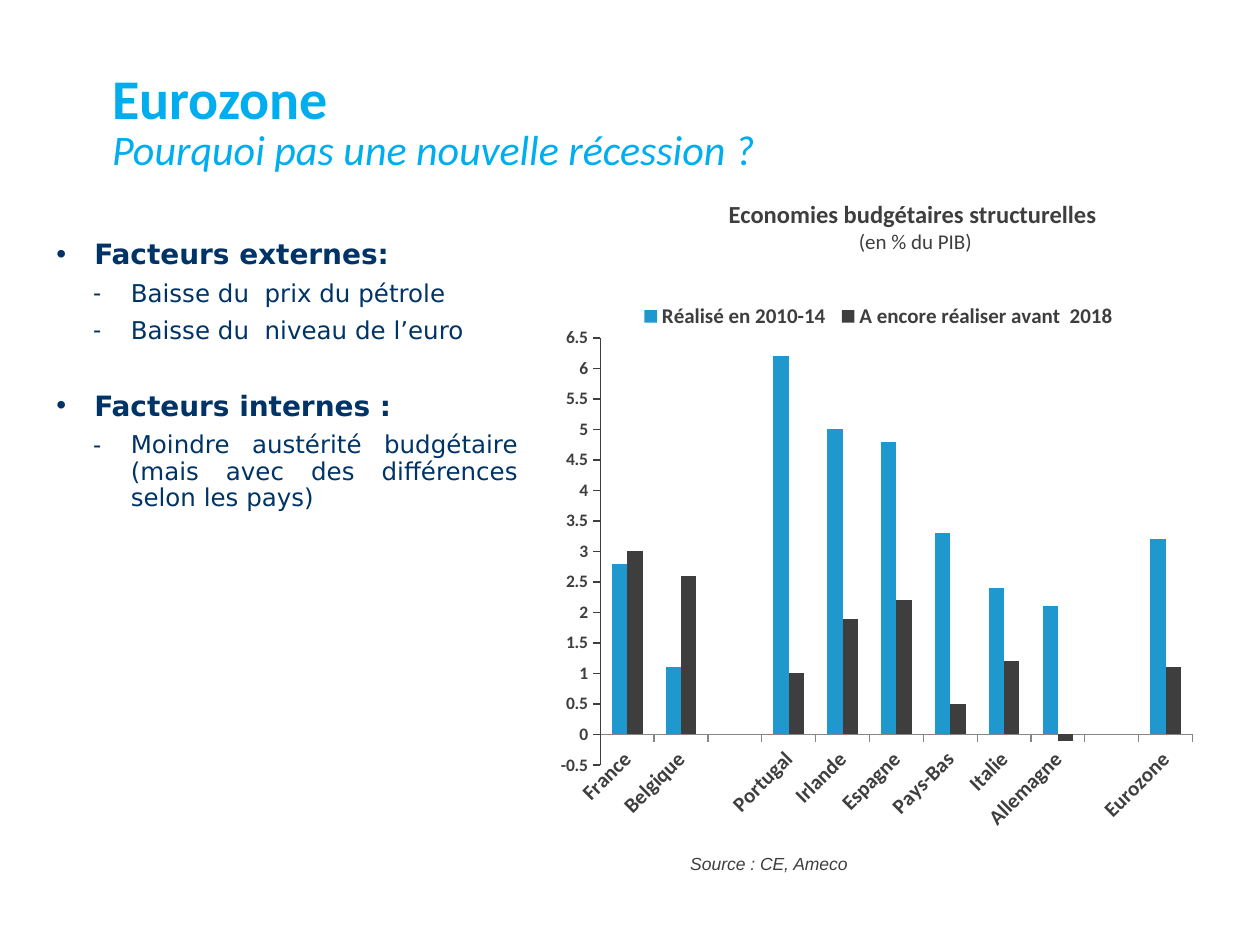
from lxml.etree import SubElement
from pptx import Presentation
from pptx.chart.data import CategoryChartData
from pptx.dml.color import RGBColor
from pptx.enum.chart import XL_CHART_TYPE, XL_LEGEND_POSITION, XL_TICK_MARK
from pptx.enum.text import MSO_ANCHOR, PP_ALIGN
from pptx.oxml.ns import qn
from pptx.util import Inches, Pt

COLORS = {"title": "00AEEF", "body": "003366", "dark": "3E3E3E",
          "done": "1F99CD", "axis": "868686"}
COUNTRIES = ["France", "Belgique", "", "Portugal", "Irlande", "Espagne",
             "Pays-Bas", "Italie", "Allemagne", "", "Eurozone"]
SAVINGS = {
    "Réalisé en 2010-14":
        ("done", [2.8, 1.1, None, 6.2, 5, 4.8, 3.3, 2.4, 2.1, None, 3.2]),
    "A encore réaliser avant  2018 ":
        ("dark", [3, 2.6, None, 1, 1.9, 2.2, 0.5, 1.2, -0.1, None, 1.1]),
}
FACTORS = [
    ("Facteurs externes: ",
     ["Baisse du  prix du pétrole", "Baisse du  niveau de l’euro "]),
    ("Facteurs internes :",
     ["Moindre austérité budgétaire (mais avec des différences selon les pays) "]),
]


def rgb(name):
    return RGBColor.from_string(COLORS[name])


def set_layout(element, position, **fractions):
    """Place a chart part by fractions of the chart's size."""
    for old in element.findall(qn("c:layout")):
        element.remove(old)
    layout = element.makeelement(qn("c:layout"))
    element.insert(position, layout)
    manual = SubElement(layout, qn("c:manualLayout"))
    if element.tag == qn("c:plotArea"):
        SubElement(manual, qn("c:layoutTarget")).set("val", "inner")
    for mode in ("xMode", "yMode"):
        SubElement(manual, qn(f"c:{mode}")).set("val", "edge")
    for key, value in fractions.items():
        SubElement(manual, qn(f"c:{key}")).set("val", str(value))


class SlideBuilder:
    def __init__(self, slide):
        self.slide = slide

    def style_font(self, font, color, **values):
        for key, value in values.items():
            setattr(font, key, value)
        font.color.rgb = rgb(color)

    def add_run(self, paragraph, text, color, **values):
        run = paragraph.add_run()
        run.text = text
        self.style_font(run.font, color, **values)

    def title(self, heading, subtitle, box):
        title = self.slide.shapes.title
        title.left, title.top, title.width, title.height = map(Inches, box)
        frame = title.text_frame
        frame.word_wrap = True
        frame.vertical_anchor = MSO_ANCHOR.TOP
        frame.margin_top = Inches(0.08)
        paragraph = frame.paragraphs[0]
        paragraph.alignment = PP_ALIGN.LEFT
        paragraph.line_spacing = 0.85
        self.add_run(paragraph, heading, "title", name="Calibri", size=Pt(32), bold=True)
        paragraph.add_line_break()
        self.add_run(paragraph, subtitle, "title", name="Calibri", size=Pt(24),
                     bold=False, italic=True)

    def text_frame(self, box):
        frame = self.slide.shapes.add_textbox(*map(Inches, box)).text_frame
        frame.word_wrap = True
        return frame

    def text(self, lines, box, alignment=PP_ALIGN.LEFT):
        frame = self.text_frame(box)
        for index, (line, values) in enumerate(lines):
            paragraph = frame.add_paragraph() if index else frame.paragraphs[0]
            paragraph.alignment = alignment
            self.add_run(paragraph, line, "dark", **values)

    def bullet(self, paragraph, text, level, space_before):
        properties = paragraph._p.get_or_add_pPr()
        properties.set("marL", str(Inches((0.3, 0.59)[level])))
        properties.set("indent", str(Inches(-0.3)))
        color = SubElement(properties, qn("a:buClr"))
        SubElement(color, qn("a:srgbClr")).set("val", COLORS["body"])
        SubElement(properties, qn("a:buFont")).set("typeface", "Arial")
        SubElement(properties, qn("a:buChar")).set("char", "•-"[level])
        values = {"level": level, "alignment": PP_ALIGN.JUSTIFY, "line_spacing": 0.9,
                  "space_before": Pt(space_before), "space_after": Pt(3)}
        for key, value in values.items():
            setattr(paragraph, key, value)
        self.add_run(paragraph, text, "body", name="DejaVu Sans",
                     size=Pt((16, 14)[level]), bold=level == 0)

    def bullets(self, groups, box):
        frame = self.text_frame(box)
        for index, (heading, details) in enumerate(groups):
            paragraph = frame.add_paragraph() if index else frame.paragraphs[0]
            self.bullet(paragraph, heading, 0, 24 if index else 0)
            for detail in details:
                self.bullet(frame.add_paragraph(), detail, 1, 3)

    def column_chart(self, categories, series, box):
        data = CategoryChartData()
        data.categories = categories
        for name, (_, values) in series.items():
            data.add_series(name, values)
        chart = self.slide.shapes.add_chart(
            XL_CHART_TYPE.COLUMN_CLUSTERED, *map(Inches, box), data).chart
        chart.has_title = False
        self.style_font(chart.font, "dark", name="Calibri", size=Pt(12), bold=True)

        plot = chart.plots[0]
        plot.gap_width, plot.overlap, plot.vary_by_categories = 150, 0, False
        for column, (color, _) in zip(plot.series, series.values()):
            column.invert_if_negative = False
            column.format.fill.solid()
            column.format.fill.fore_color.rgb = rgb(color)

        axes = [(chart.category_axis, 12, "axis"), (chart.value_axis, 10, "dark")]
        for axis, size, line_color in axes:
            axis.has_major_gridlines = False
            axis.major_tick_mark = XL_TICK_MARK.OUTSIDE
            axis.minor_tick_mark = XL_TICK_MARK.NONE
            axis.format.line.color.rgb = rgb(line_color)
            axis.format.line.width = Pt(0.75)
            self.style_font(axis.tick_labels.font, "dark", name="Calibri",
                            size=Pt(size), bold=True)
        label_body = chart.category_axis._element.find(qn("c:txPr")).find(qn("a:bodyPr"))
        label_body.set("rot", str(-45 * 60000))
        label_body.set("vert", "horz")
        scale = {"minimum_scale": -0.5, "maximum_scale": 6.5, "major_unit": 0.5}
        for key, value in scale.items():
            setattr(chart.value_axis, key, value)

        chart.has_legend = True
        chart.legend.position = XL_LEGEND_POSITION.BOTTOM
        chart.legend.include_in_layout = False
        self.style_font(chart.legend.font, "dark", name="Calibri", size=Pt(12), bold=True)
        set_layout(chart.legend._element, 1, x=0.18, y=0.11, w=0.7, h=0.07)
        plot_area = chart._chartSpace.chart.plotArea
        set_layout(plot_area, 0, x=0.13, y=0.18, w=0.844, h=0.692)


def main():
    presentation = Presentation()
    presentation.slide_width, presentation.slide_height = Inches(10), Inches(7.5)
    builder = SlideBuilder(presentation.slides.add_slide(presentation.slide_layouts[5]))
    builder.column_chart(COUNTRIES, SAVINGS, (4.04, 1.8, 5.57, 4.9))
    builder.bullets(FACTORS, (0.35, 1.86, 3.86, 4.8))
    builder.text([
        ("Economies budgétaires structurelles ",
         {"name": "Calibri", "size": Pt(14), "bold": True}),
        ("(en % du PIB)", {"name": "Calibri", "size": Pt(12)}),
    ], (4.92, 1.53, 4.69, 0.54), PP_ALIGN.CENTER)
    builder.text([("Source : CE, Ameco", {"name": "Arial", "size": Pt(10), "italic": True})],
                 (5.38, 6.72, 2.13, 0.27))
    builder.title("Eurozone", "Pourquoi pas une nouvelle récession ?",
                  (0.79, 0.51, 7.03, 1.02))
    presentation.save("out.pptx")


if __name__ == "__main__":
    main()
